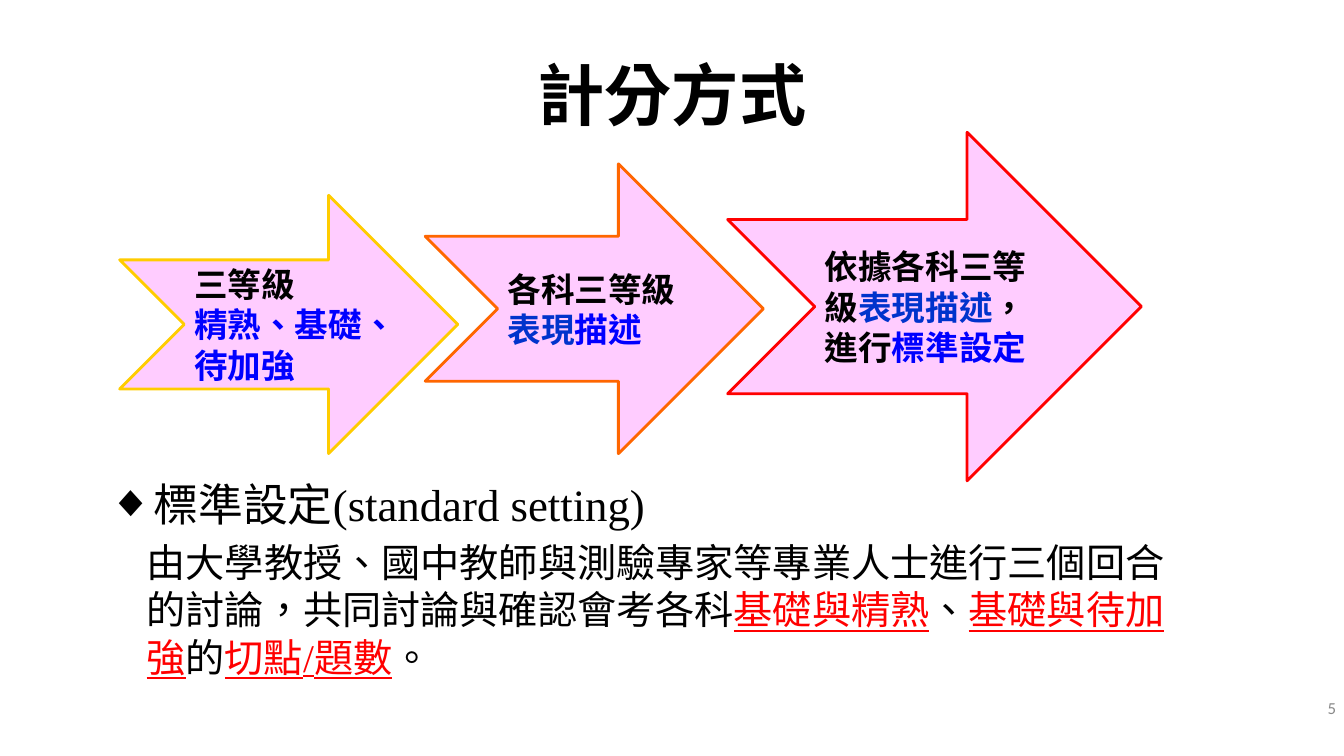
from dataclasses import dataclass

from lxml.etree import SubElement
from pptx import Presentation
from pptx.dml.color import RGBColor
from pptx.enum.lang import MSO_LANGUAGE_ID
from pptx.enum.shapes import MSO_SHAPE
from pptx.enum.text import MSO_ANCHOR, MSO_AUTO_SIZE, PP_ALIGN
from pptx.oxml.ns import qn
from pptx.util import Emu, Pt

EMU_PER_PX = 9525


@dataclass(frozen=True)
class Theme:
    black: str = "000000"
    blue: str = "0000FF"
    deep_blue: str = "0033CC"
    red: str = "FF0000"
    grey: str = "898989"
    pink: str = "FFCCFF"
    yellow: str = "FFCC00"
    orange: str = "FF6600"
    cjk_font: str = "Noto Sans CJK SC"
    serif_font: str = "Times New Roman"
    number_font: str = "Calibri"
    title_size: int = 48
    step_size: int = 24
    heading_size: int = 32
    detail_size: int = 28
    number_size: int = 12


THEME = Theme()


@dataclass(frozen=True)
class Box:
    left: int
    top: int
    width: int
    height: int

    def emu(self) -> tuple[Emu, ...]:
        return tuple(px(v) for v in (self.left, self.top, self.width, self.height))


@dataclass(frozen=True)
class Span:
    text: str
    color: str = THEME.black
    underline: bool = False


@dataclass(frozen=True)
class Step:
    box: Box
    outline: str
    lines: tuple[tuple[Span, ...], ...]


STEPS = (
    Step(Box(114, 186, 322, 246), THEME.yellow, (
        (Span("三等級"),),
        (Span("精熟、基礎、待加強", THEME.blue),),
    )),
    Step(Box(405, 156, 322, 276), THEME.orange, (
        (Span("各科三等級"),),
        (Span("表現", THEME.deep_blue), Span("描述", THEME.blue)),
    )),
    Step(Box(693, 126, 394, 332), THEME.red, (
        (Span("依據各科三等級"), Span("表現描述", THEME.deep_blue),
         Span("，進行"), Span("標準設定", THEME.blue)),
    )),
)
HEADING = (Span("標準設定(standard setting)"),)
DETAIL = (
    Span("由大學教授、國中教師與測驗專家等專業人士進行三個回合的討論，共同討論與確認會考各科"),
    Span("基礎與精熟", THEME.red, True),
    Span("、"),
    Span("基礎與待加強", THEME.red, True),
    Span("的"),
    Span("切點/題數", THEME.red, True),
    Span("。"),
)


def px(value: int) -> Emu:
    return Emu(value * EMU_PER_PX)


def place(shape, box: Box) -> None:
    shape.left, shape.top, shape.width, shape.height = box.emu()


def write(paragraph, spans: tuple[Span, ...], size: int, font_name: str,
          bold: bool = False, align: PP_ALIGN = PP_ALIGN.LEFT) -> None:
    paragraph.alignment = align
    for span in spans:
        run = paragraph.add_run()
        run.text = span.text
        font = run.font
        font.size, font.bold, font.name = Pt(size), bold, font_name
        font.color.rgb = RGBColor.from_string(span.color)
        font.language_id = MSO_LANGUAGE_ID.TRADITIONAL_CHINESE
        if span.underline:
            font.underline = True
        east_asian = SubElement(run._r.get_or_add_rPr(), qn("a:ea"))
        east_asian.set("typeface", THEME.cjk_font)


def set_bullet(paragraph, indent: int, mark: str = "") -> None:
    """Indent the paragraph, hanging the mark in the margin if there is one."""
    properties = paragraph._p.get_or_add_pPr()
    properties.set("marL", str(px(indent)))
    properties.set("indent", str(px(-indent if mark else 0)))
    if mark:
        SubElement(properties, qn("a:buChar")).set("char", mark)
    else:
        SubElement(properties, qn("a:buNone"))


def draw_step(slide, step: Step) -> None:
    arrow = slide.shapes.add_shape(MSO_SHAPE.NOTCHED_RIGHT_ARROW, *step.box.emu())
    arrow.shadow.inherit = False
    arrow.fill.solid()
    arrow.fill.fore_color.rgb = RGBColor.from_string(THEME.pink)
    arrow.line.color.rgb = RGBColor.from_string(step.outline)
    arrow.line.width = Pt(2)
    frame = arrow.text_frame
    frame.word_wrap = True
    frame.vertical_anchor = MSO_ANCHOR.MIDDLE
    for index, spans in enumerate(step.lines):
        paragraph = frame.add_paragraph() if index else frame.paragraphs[0]
        write(paragraph, spans, THEME.step_size, THEME.cjk_font, bold=True)


def draw_title(slide) -> None:
    title = slide.shapes.title
    place(title, Box(64, 29, 1152, 120))
    title.text_frame.vertical_anchor = MSO_ANCHOR.MIDDLE
    write(title.text_frame.paragraphs[0], (Span("計分方式"),), THEME.title_size,
          THEME.cjk_font, bold=True, align=PP_ALIGN.CENTER)


def draw_explanation(slide) -> None:
    body = slide.placeholders[1]
    place(body, Box(94, 449, 1052, 204))
    frame = body.text_frame
    frame.auto_size = MSO_AUTO_SIZE.NONE
    heading, detail = frame.paragraphs[0], frame.add_paragraph()
    heading.space_before = Pt(0)
    detail.space_before = Pt(6)
    set_bullet(heading, 36, "◆")
    set_bullet(detail, 36)
    write(heading, HEADING, THEME.heading_size, THEME.serif_font)
    write(detail, DETAIL, THEME.detail_size, THEME.serif_font)


def draw_page_number(slide) -> None:
    number = slide.shapes.add_textbox(*Box(983, 655, 299, 38).emu())
    frame = number.text_frame
    frame.word_wrap = True
    frame.vertical_anchor = MSO_ANCHOR.MIDDLE
    write(frame.paragraphs[0], (Span("5", THEME.grey),), THEME.number_size,
          THEME.number_font, align=PP_ALIGN.RIGHT)


def main() -> None:
    presentation = Presentation()
    presentation.slide_width, presentation.slide_height = px(1280), px(720)
    slide = presentation.slides.add_slide(presentation.slide_layouts[1])
    draw_title(slide)
    for step in STEPS:
        draw_step(slide, step)
    draw_explanation(slide)
    draw_page_number(slide)
    presentation.save("out.pptx")


if __name__ == "__main__":
    main()
